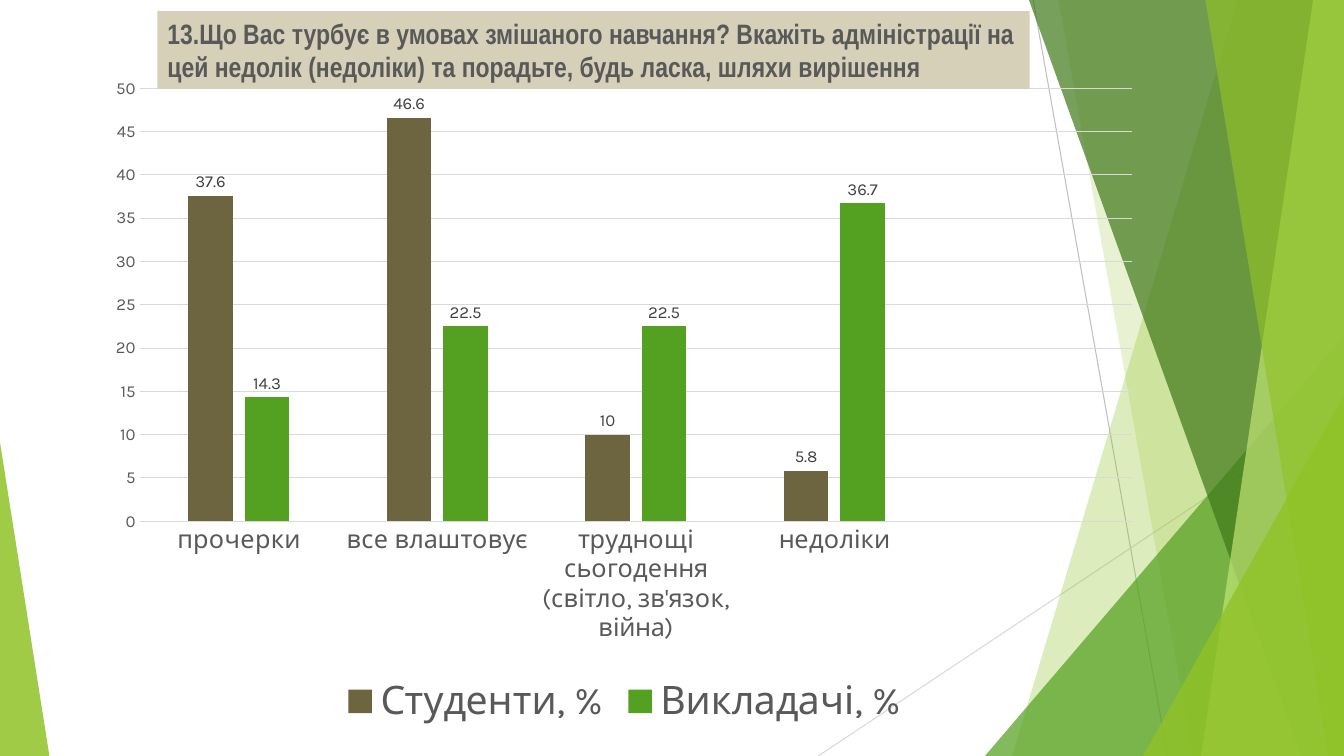
import lxml.etree
import pptx
import pptx.chart.data
import pptx.dml.color
import pptx.enum.chart
import pptx.enum.shapes
import pptx.enum.text
import pptx.oxml
import pptx.oxml.ns
import pptx.util

Pt = pptx.util.Pt
RGBColor = pptx.dml.color.RGBColor
qn = pptx.oxml.ns.qn

LIME = RGBColor(0x90, 0xC2, 0x26)
GREEN = RGBColor(0x54, 0xA0, 0x21)
DARK_GREEN = RGBColor(0x3F, 0x78, 0x19)
PALE_LIME = RGBColor(0xC0, 0xE4, 0x74)
OLIVE = RGBColor(0x6D, 0x65, 0x40)
SAND = RGBColor(0xD6, 0xD0, 0xB8)
TEXT_GREY = RGBColor(0x59, 0x59, 0x59)
LABEL_GREY = RGBColor(0x40, 0x40, 0x40)
MID_GREY = RGBColor(0xBF, 0xBF, 0xBF)
LIGHT_GREY = RGBColor(0xD9, 0xD9, 0xD9)

WIDTH, HEIGHT = 960, 540


def paint(shape, color, opacity=100):
    shape.shadow.inherit = False
    shape.line.fill.background()
    shape.fill.solid()
    shape.fill.fore_color.rgb = color
    if opacity < 100:
        color_element = shape.fill._xPr.find(".//" + qn("a:srgbClr"))
        alpha = lxml.etree.SubElement(color_element, qn("a:alpha"))
        alpha.set("val", str(opacity * 1000))


def set_font(font, size, color):
    font.name = "Karla"
    font.size = Pt(size)
    font.color.rgb = color


deck = pptx.Presentation()
deck.slide_width, deck.slide_height = Pt(WIDTH), Pt(HEIGHT)
page = deck.slides.add_slide(deck.slide_layouts[6])
shapes = page.shapes

for start_x, start_y, end_x, end_y, color in [
    (738, 0, 834, HEIGHT, MID_GREY),
    (WIDTH, 290, 584.5, HEIGHT, LIGHT_GREY),
]:
    line = shapes.add_connector(
        pptx.enum.shapes.MSO_CONNECTOR.STRAIGHT,
        Pt(start_x), Pt(start_y), Pt(end_x), Pt(end_y))
    line.line.color.rgb = color
    line.line.width = Pt(0.75)
    lxml.etree.SubElement(line._element.spPr, qn("a:effectLst"))

BAND, TRIANGLE = "band", "triangle"
facets = [
    (BAND, (884, 723), LIME, 30),
    (BAND, (756, 852), LIME, 20),
    (TRIANGLE, (703.5, 240, 256.5, 1), GREEN, 72),
    (BAND, (735, 929.5), DARK_GREEN, 70),
    (BAND, (938, 858), PALE_LIME, 70),
    (BAND, (861, 949), LIME, 65),
    (TRIANGLE, (816.5, 283, 143.5, 1), LIME, 80),
    (TRIANGLE, (0, 316, 35.3, 0), LIME, 85),
]
for kind, geometry, color, opacity in facets:
    if kind == BAND:
        top_x, bottom_x = geometry
        outline = shapes.build_freeform(Pt(top_x), 0)
        outline.add_line_segments(
            [(Pt(WIDTH), 0), (Pt(WIDTH), Pt(HEIGHT)), (Pt(bottom_x), Pt(HEIGHT))])
        facet = outline.convert_to_shape()
    else:
        left, top, width, apex = geometry
        facet = shapes.add_shape(
            pptx.enum.shapes.MSO_SHAPE.ISOSCELES_TRIANGLE,
            Pt(left), Pt(top), Pt(width), Pt(HEIGHT - top))
        facet.adjustments[0] = apex
    paint(facet, color, opacity)

data = pptx.chart.data.CategoryChartData()
data.categories = [
    "прочерки", "все влаштовує",
    "труднощі сьогодення (світло, зв'язок, війна)", "недоліки", ""]
data.add_series("Студенти, %", [37.6, 46.6, 10, 5.8, None])
data.add_series("Викладачі, %", [14.3, 22.5, 22.5, 36.7, None])
chart = shapes.add_chart(
    pptx.enum.chart.XL_CHART_TYPE.COLUMN_CLUSTERED,
    Pt(71.3), Pt(45.4), Pt(749.5), Pt(477.4), data).chart
set_font(chart.font, 10, RGBColor(0, 0, 0))
chart.has_title = False
chart.has_legend = True
chart.legend.position = pptx.enum.chart.XL_LEGEND_POSITION.BOTTOM
chart.legend.include_in_layout = False
set_font(chart.legend.font, 28, TEXT_GREY)

category_axis, value_axis = chart.category_axis, chart.value_axis
for axis, size in [(category_axis, 18), (value_axis, 12)]:
    set_font(axis.tick_labels.font, size, TEXT_GREY)
    axis.major_tick_mark = pptx.enum.chart.XL_TICK_MARK.NONE
    axis.minor_tick_mark = pptx.enum.chart.XL_TICK_MARK.NONE
value_axis.minimum_scale, value_axis.maximum_scale = 0, 50
value_axis.major_unit = 5
value_axis.format.line.fill.background()
for rule in (category_axis.format.line, value_axis.major_gridlines.format.line):
    rule.color.rgb = LIGHT_GREY
    rule.width = Pt(0.75)

plot = chart.plots[0]
plot.gap_width, plot.overlap = 219, -27
plot.vary_by_categories = False
for series, color in zip(plot.series, (OLIVE, GREEN)):
    series.format.fill.solid()
    series.format.fill.fore_color.rgb = color
    labels = series.data_labels
    labels.show_value = True
    labels.position = pptx.enum.chart.XL_LABEL_POSITION.OUTSIDE_END
    set_font(labels.font, 12, LABEL_GREY)

plot_area = chart._chartSpace.chart.plotArea
for old_layout in plot_area.findall(qn("c:layout")):
    plot_area.remove(old_layout)
layout = lxml.etree.Element(qn("c:layout"))
manual = lxml.etree.SubElement(layout, qn("c:manualLayout"))
for tag, value in [
    ("layoutTarget", "inner"), ("xMode", "edge"), ("yMode", "edge"),
    ("x", "0.038"), ("y", "0.037"), ("w", "0.946"), ("h", "0.648"),
]:
    lxml.etree.SubElement(manual, qn("c:" + tag)).set("val", value)
plot_area.insert(0, layout)

title = shapes.add_shape(
    pptx.enum.shapes.MSO_SHAPE.RECTANGLE, Pt(112.5), Pt(8), Pt(623), Pt(55.5))
paint(title, SAND)
frame = title.text_frame
frame.word_wrap = True
frame.auto_size = pptx.enum.text.MSO_AUTO_SIZE.SHAPE_TO_FIT_TEXT
frame.vertical_anchor = pptx.enum.text.MSO_ANCHOR.TOP
para = frame.paragraphs[0]
para.text = (
    "13.Що Вас турбує в умовах змішаного навчання? Вкажіть адміністрації на "
    "цей недолік (недоліки) та порадьте, будь ласка, шляхи вирішення")
para.alignment = pptx.enum.text.PP_ALIGN.LEFT
para.font.name = "Arial Narrow"
para.font.size = Pt(20)
para.font.bold = True
para.font.color.rgb = TEXT_GREY

deck.save("out.pptx")
